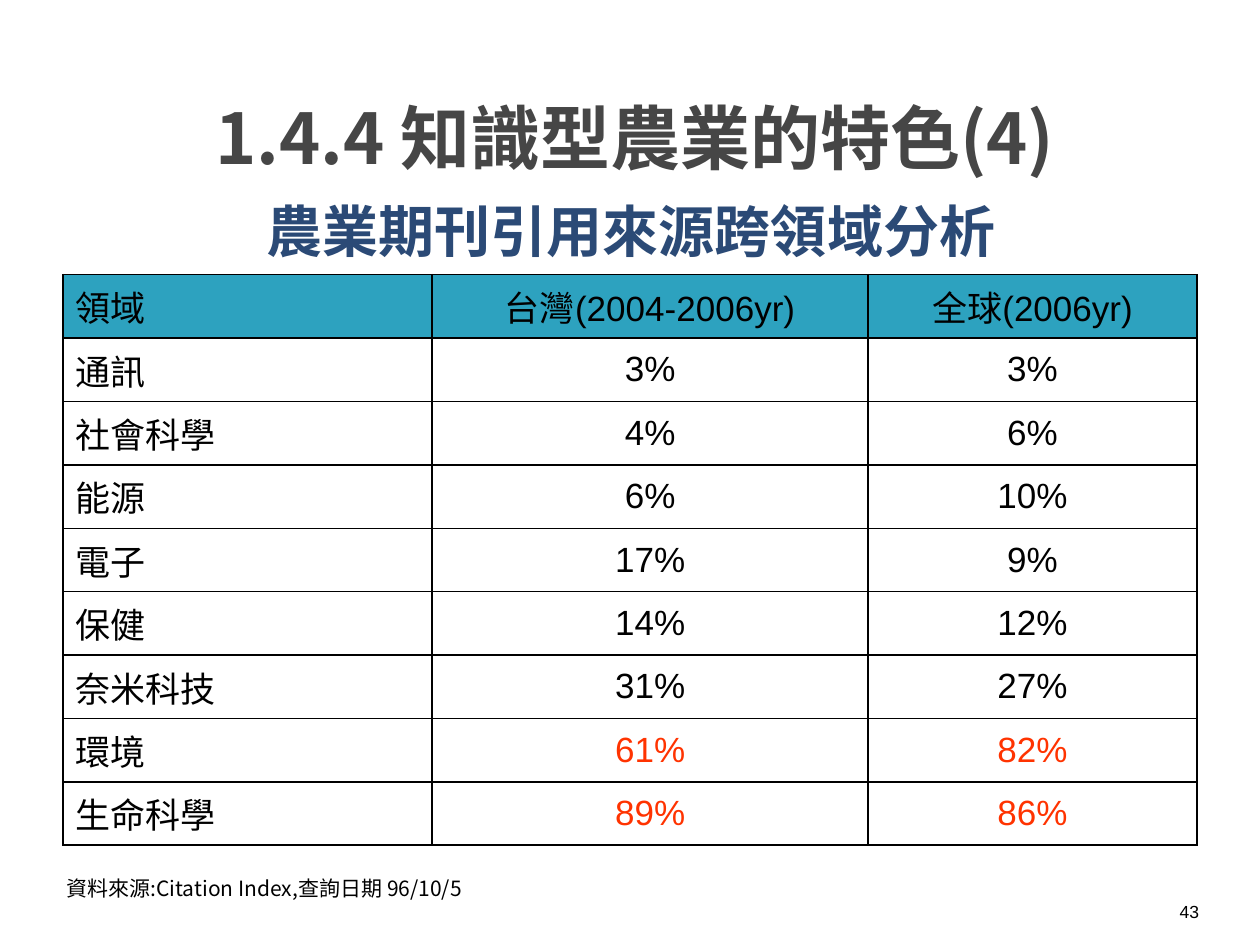
"""Build the slide on cross-field citation sources of agricultural journals."""
from lxml import etree
from pptx import Presentation
from pptx.dml.color import RGBColor
from pptx.enum.text import MSO_ANCHOR, PP_ALIGN
from pptx.oxml.ns import qn
from pptx.util import Inches, Pt

LEFT, CENTER = PP_ALIGN.LEFT, PP_ALIGN.CENTER
TOP, MIDDLE = MSO_ANCHOR.TOP, MSO_ANCHOR.MIDDLE

HEADING = "1.4.4 知識型農業的特色(4)"
SUBHEADING = "農業期刊引用來源跨領域分析"
SOURCE = "資料來源:Citation Index,查詢日期 96/10/5"
PAGE = "43"
HEADER = ("領域", "台灣(2004-2006yr)", "全球(2006yr)")
FIELDS = [
    ("通訊", 3, 3),
    ("社會科學", 4, 6),
    ("能源", 6, 10),
    ("電子", 17, 9),
    ("保健", 14, 12),
    ("奈米科技", 31, 27),
    ("環境", 61, 82),
    ("生命科學", 89, 86),
]
HIGHLIGHT_FROM = 50
COLUMN_WIDTHS = (2.93, 3.46, 2.61)
TABLE_BOX = (0.5, 2.18, 9, 4.53)
HANGING = 0.38

THEME = {
    "black": "000000", "white": "FFFFFF", "heading": "464646",
    "subheading": "2B4A76", "header": "2DA2BF", "highlight": "FF3300",
    "sans": "Arial", "cjk": "Noto Sans CJK SC", "mono": "DejaVu Sans Mono",
    "heading_size": 40, "subheading_size": 32, "table_size": 20,
    "source_size": 12, "page_size": 10,
}


def paint(target, color):
    target.fill.solid()
    target.fill.fore_color.rgb = RGBColor.from_string(THEME[color])


def write(frame, text, size, font="sans", color="black", bold=False, align=LEFT):
    paragraph = frame.paragraphs[0]
    paragraph.alignment = align
    run = paragraph.add_run()
    run.text = text
    run.font.size = Pt(THEME[size])
    run.font.bold = bold
    run.font.color.rgb = RGBColor.from_string(THEME[color])
    run.font.name = THEME[font]
    east_asian = etree.SubElement(run.font._element, qn("a:ea"))
    east_asian.set("typeface", THEME["cjk"])
    return paragraph


def place(shape, box):
    shape.left, shape.top, shape.width, shape.height = map(Inches, box)


def add_text(slide, text, box, size, anchor=MIDDLE, **style):
    label = slide.shapes.add_textbox(*map(Inches, box))
    label.text_frame.word_wrap = True
    label.text_frame.vertical_anchor = anchor
    write(label.text_frame, text, size, **style)
    return label


def add_borders(cell):
    properties = cell._tc.get_or_add_tcPr()
    for position, side in enumerate(("a:lnL", "a:lnR", "a:lnT", "a:lnB")):
        line = etree.Element(qn(side), w=str(Pt(1)))
        fill = etree.SubElement(line, qn("a:solidFill"))
        etree.SubElement(fill, qn("a:srgbClr"), val=THEME["black"])
        properties.insert(position, line)


def fill_cell(cell, text, fill, color, align):
    cell.vertical_anchor = MIDDLE
    paint(cell, fill)
    add_borders(cell)
    paragraph = write(cell.text_frame, text, "table_size", color=color, align=align)
    indents = paragraph._p.get_or_add_pPr()
    indents.set("marL", str(Inches(HANGING)))
    indents.set("indent", str(-Inches(HANGING)))


def add_field_table(slide):
    row_count = len(FIELDS) + 1
    table = slide.shapes.add_table(
        row_count, len(HEADER), *map(Inches, TABLE_BOX)).table
    for column, width in zip(table.columns, COLUMN_WIDTHS):
        column.width = Inches(width)
    for row in table.rows:
        row.height = Inches(TABLE_BOX[3] / row_count)
    for c, heading in enumerate(HEADER):
        fill_cell(table.cell(0, c), heading, "header", "black", CENTER if c else LEFT)
    for r, (field, *shares) in enumerate(FIELDS, 1):
        fill_cell(table.cell(r, 0), field, "white", "black", LEFT)
        for c, share in enumerate(shares, 1):
            color = "highlight" if share > HIGHLIGHT_FROM else "black"
            fill_cell(table.cell(r, c), f"{share}%", "white", color, CENTER)


def main():
    deck = Presentation()
    deck.slide_width, deck.slide_height = Inches(10), Inches(7.5)
    slide = deck.slides.add_slide(deck.slide_layouts[5])

    subheading = slide.shapes.title
    place(subheading, (0.51, 1.47, 9, 0.71))
    subheading.text_frame.vertical_anchor = MIDDLE
    write(subheading.text_frame, SUBHEADING, "subheading_size", font="mono",
          color="subheading", bold=True, align=CENTER)

    add_text(slide, PAGE, (9.17, 7.09, 0.54, 0.29), "page_size", align=CENTER)
    add_field_table(slide)
    source = add_text(slide, SOURCE, (0.43, 6.9, 3.51, 0.3), "source_size",
                      anchor=TOP, font="cjk")
    paint(source, "white")
    add_text(slide, HEADING, (0.39, 0.38, 9.3, 1.41), "heading_size", font="cjk",
             color="heading", bold=True, align=CENTER)
    deck.save("out.pptx")


if __name__ == "__main__":
    main()
